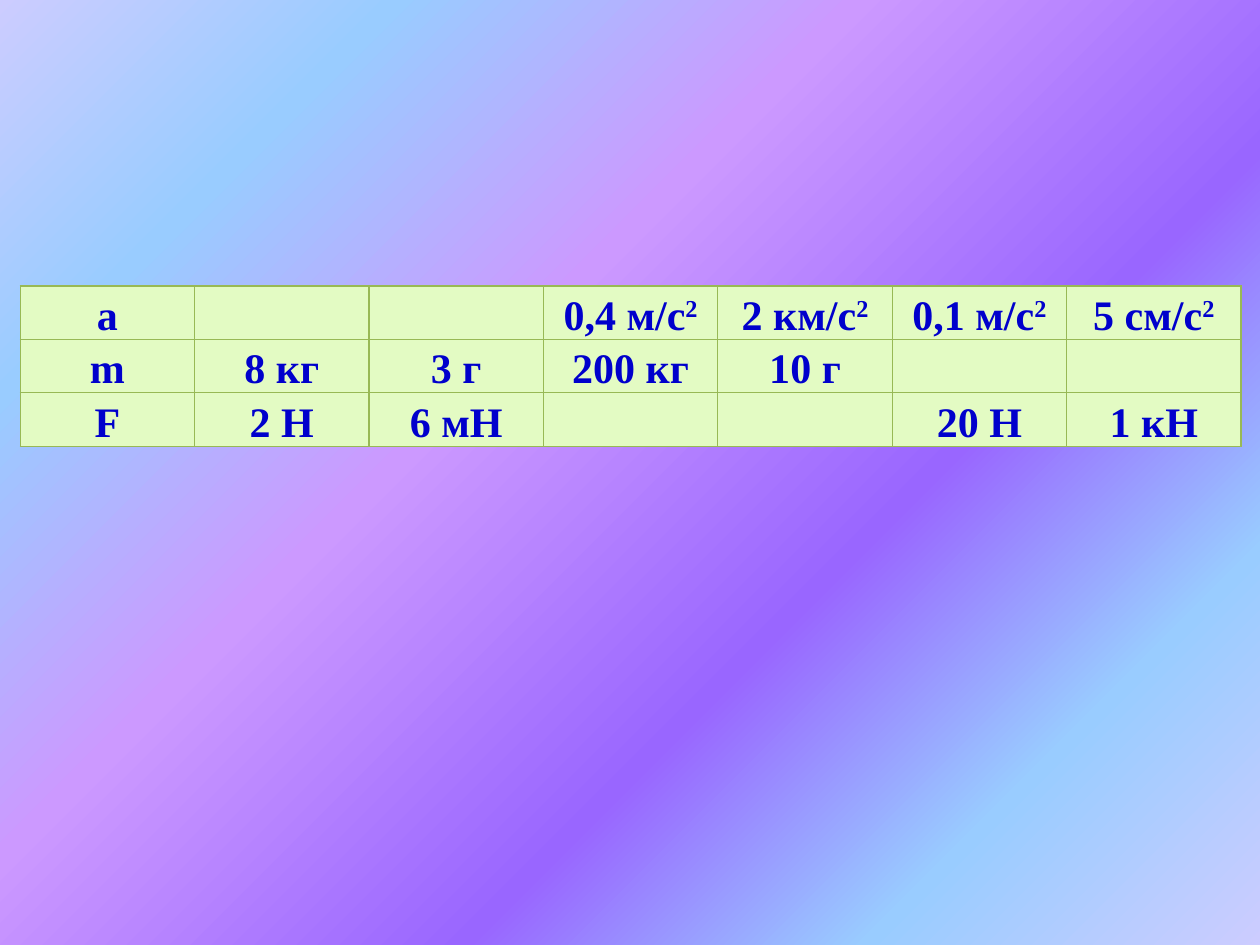
from dataclasses import dataclass

from lxml.etree import SubElement
from pptx import Presentation
from pptx.dml.color import RGBColor
from pptx.enum.text import PP_ALIGN
from pptx.oxml.ns import qn
from pptx.util import Inches, Pt


@dataclass(frozen=True)
class Theme:
    font: str = "Times New Roman"
    size: int = 24
    ink: str = "0000CC"
    cell: str = "E3FBC3"
    edge: str = "98B955"
    rule: float = 0.75
    back: tuple = ((0, "CCCCFF"), (18, "99CCFF"), (39, "CC99FF"),
                   (64, "9966FF"), (82, "99CCFF"), (100, "CCCCFF"))


def write(para, text, font, size, color, bold=False, base=0):
    run = para.add_run()
    run.text = text
    run.font.name = font
    run.font.size = Pt(size)
    run.font.bold = bold
    run.font.color.rgb = RGBColor.from_string(color)
    if base:
        run.font._element.set("baseline", str(base * 1000))


class Deck:
    def __init__(self, theme):
        self.theme = theme
        self.prs = Presentation()
        self.prs.slide_width, self.prs.slide_height = Inches(10), Inches(7.5)
        self.slide = self.prs.slides.add_slide(self.prs.slide_layouts[6])

    def backdrop(self):
        """Diagonal gradient from the top left corner."""
        fill = self.slide.background.fill
        fill.gradient()
        grad = self.slide.background._cSld.find(".//" + qn("a:gradFill"))
        stops = grad.find(qn("a:gsLst"))
        for stop in list(stops):
            stops.remove(stop)
        for pos, color in self.theme.back:
            stop = SubElement(stops, qn("a:gs"), pos=str(pos * 1000))
            SubElement(stop, qn("a:srgbClr"), val=color)
        line = grad.find(qn("a:lin"))
        line.set("ang", str(45 * 60000))
        line.set("scaled", "0")

    def border(self, cell):
        props = cell._tc.get_or_add_tcPr()
        for at, side in enumerate(("lnL", "lnR", "lnT", "lnB")):
            line = SubElement(props, qn("a:" + side), w=str(Pt(self.theme.rule)))
            fill = SubElement(line, qn("a:solidFill"))
            SubElement(fill, qn("a:srgbClr"), val=self.theme.edge)
            props.insert(at, line)  # borders come before the fill

    def fill_cell(self, cell, text):
        look = self.theme
        cell.fill.solid()
        cell.fill.fore_color.rgb = RGBColor.from_string(look.cell)
        cell.margin_left = cell.margin_right = Inches(0.07)
        cell.margin_top = cell.margin_bottom = 0
        self.border(cell)
        para = cell.text_frame.paragraphs[0]
        para.alignment = PP_ALIGN.CENTER
        para.line_spacing = 1.15
        # A caret marks the start of a superscript
        for part, base in zip(text.split("^"), (0, 30)):
            if part:
                write(para, part, font=look.font, size=look.size,
                      color=look.ink, bold=True, base=base)

    def table(self, rows, left, top, width, high):
        count = len(rows[0])
        frame = self.slide.shapes.add_table(
            len(rows), count, Inches(left), Inches(top),
            Inches(width), Inches(high * len(rows)))
        grid = frame.table
        grid.first_row = grid.horz_banding = False
        for col in grid.columns:
            col.width = Inches(width / count)
        for r, row in enumerate(rows):
            grid.rows[r].height = Inches(high)
            for c, text in enumerate(row):
                self.fill_cell(grid.cell(r, c), text)

    def save(self):
        self.prs.save("out.pptx")


def main():
    deck = Deck(Theme())
    deck.backdrop()
    # Acceleration, mass and force
    rows = (
        ("a", "", "", "0,4 м/с^2", "2 км/с^2", "0,1 м/с^2", "5 см/с^2"),
        ("m", "8 кг", "3 г", "200 кг", "10 г", "", ""),
        ("F", "2 Н", "6 мН", "", "", "20 Н", "1 кН"),
    )
    deck.table(rows, left=0.16, top=2.27, width=9.69, high=0.42)
    deck.save()


if __name__ == "__main__":
    main()
